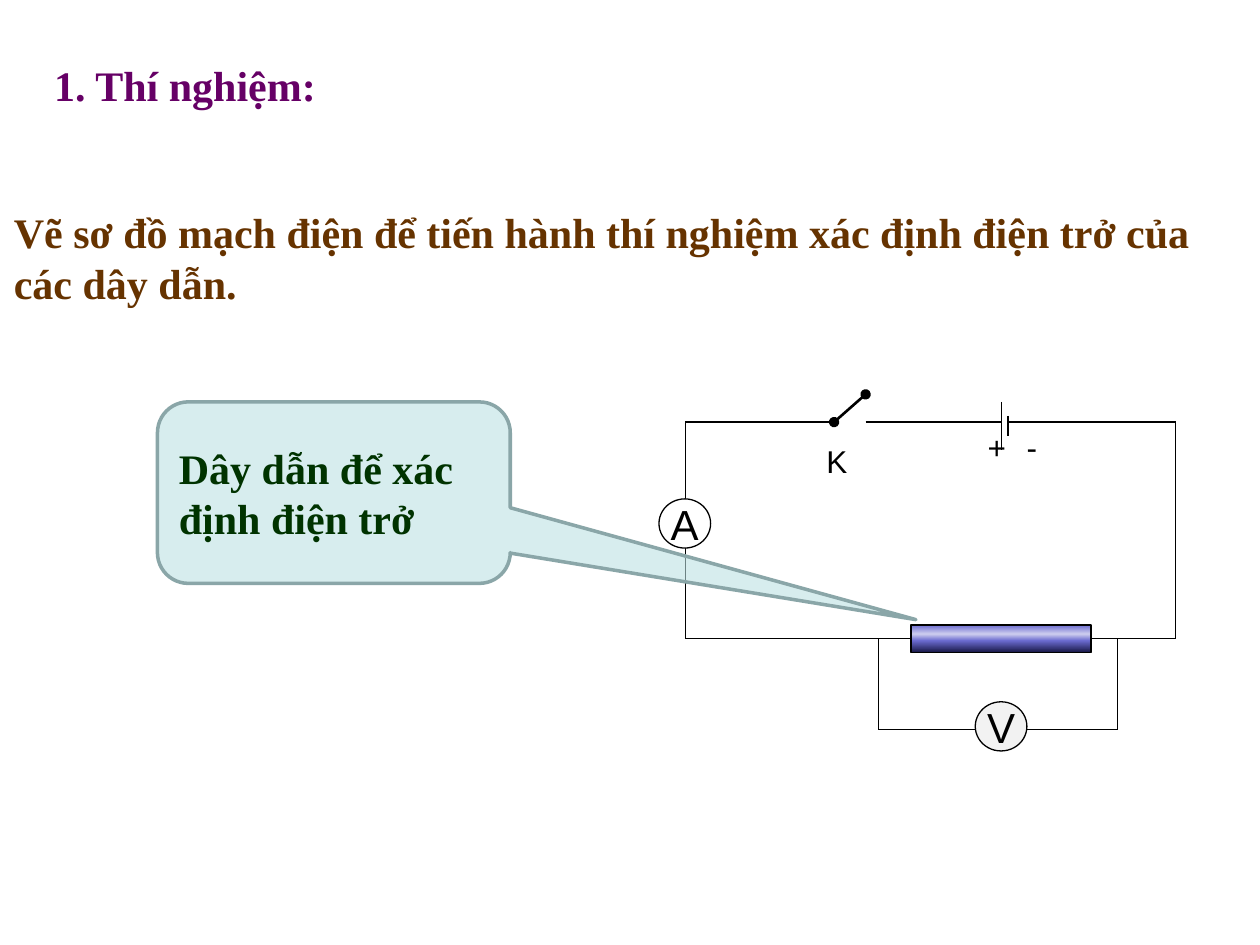
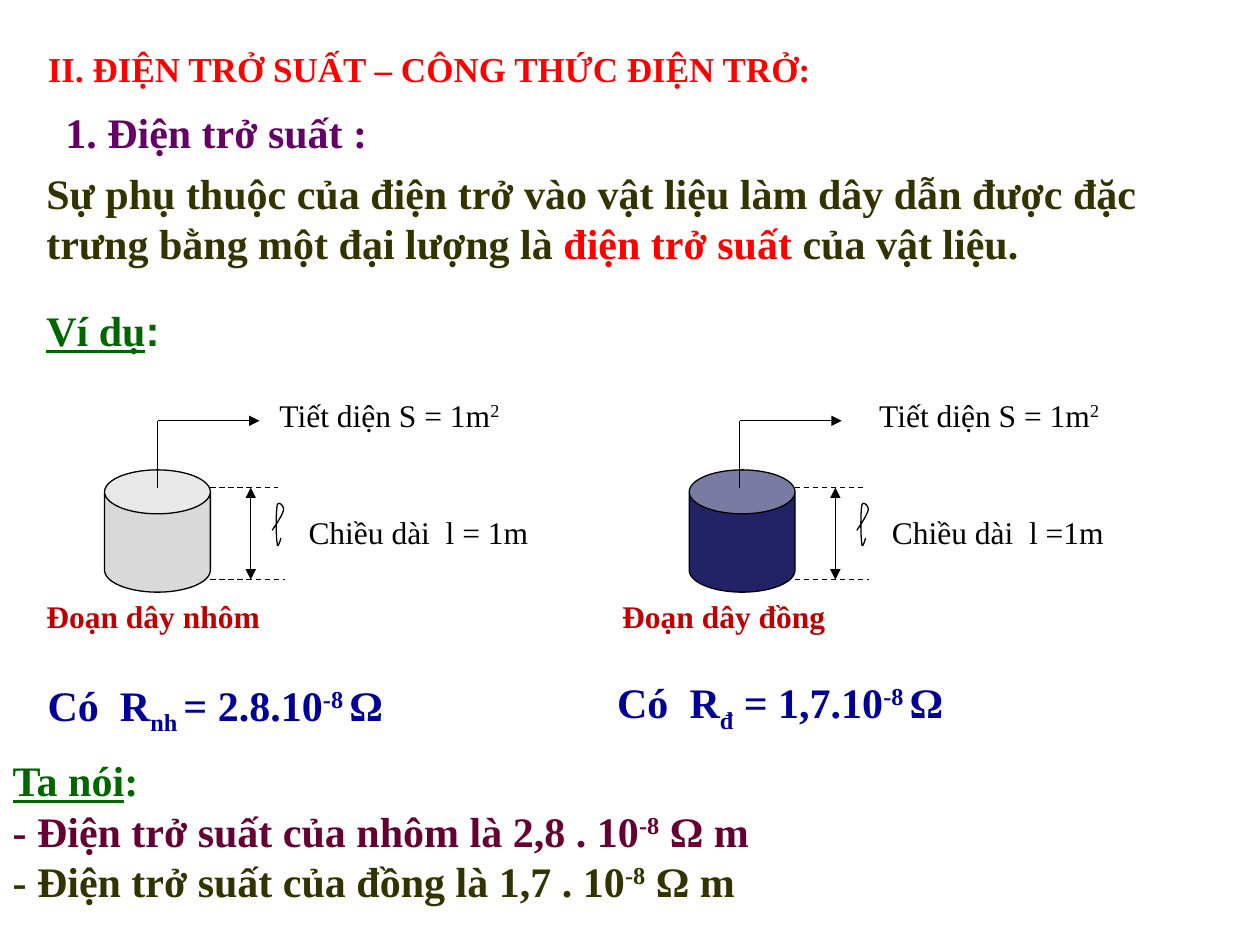
from lxml import etree
from pptx import Presentation
from pptx.dml.color import RGBColor
from pptx.enum.dml import MSO_LINE
from pptx.enum.shapes import MSO_CONNECTOR, MSO_SHAPE
from pptx.enum.text import MSO_ANCHOR, MSO_AUTO_SIZE, PP_ALIGN
from pptx.oxml.ns import qn
from pptx.util import Inches, Pt

STRAIGHT = MSO_CONNECTOR.STRAIGHT
ELLIPSE, RECTANGLE, CAN = MSO_SHAPE.OVAL, MSO_SHAPE.RECTANGLE, MSO_SHAPE.CAN
CALLOUT = MSO_SHAPE.ROUNDED_RECTANGULAR_CALLOUT
TOP, MIDDLE = MSO_ANCHOR.TOP, MSO_ANCHOR.MIDDLE
LEFT, CENTER = PP_ALIGN.LEFT, PP_ALIGN.CENTER
NO_AUTO_SIZE = MSO_AUTO_SIZE.NONE
DASH = MSO_LINE.DASH

SERIF, SANS = "Times New Roman", "Arial"
COLORS = {
    "black": "000000", "white": "FFFFFF", "red": "FF0000", "purple": "660066",
    "brown": "663300", "olive": "333300", "green": "006600", "dark_green": "003300",
    "navy": "000099", "plum": "660033", "caption": "C00000", "meter": "F2F2F2",
    "callout": "BBE0E3", "callout_edge": "8AA6A8",
    "aluminium": "D9D9D9", "copper": "222267",
}
CONDUCTOR_STOPS = [(0, "6B6BCF"), (33, "CECEEF"), (57, "6B6BCF"), (100, "171745")]
SUB, SUPER = {"baseline": -25}, {"baseline": 30}
LENGTH_SYMBOL = [
    [(0, 0.24), (0.04, 0.18), (0.08, 0.12), (0.09, 0.08)],
    [(0.09, 0.08), (0.1, 0.05), (0.05, 0), (0.04, 0.04)],
    [(0.04, 0.04), (0.03, 0.09), (0.03, 0.3), (0.04, 0.34)],
    [(0.04, 0.34), (0.04, 0.39), (0.06, 0.34), (0.07, 0.3)],
]


def rgb(name):
    return RGBColor.from_string(COLORS[name])


def write_text(paragraph, text, font=SERIF, size=24, color="black", bold=True,
               underline=False, baseline=0):
    run = paragraph.add_run()
    run.text = text
    run.font.name = font
    run.font.size = Pt(size)
    run.font.bold = bold
    run.font.underline = underline
    run.font.color.rgb = rgb(color)
    if baseline:
        run._r.get_or_add_rPr().set("baseline", str(baseline * 1000))


def curve_points(curves, steps=8):
    for start, first, second, end in curves:
        for step in range(steps + 1):
            t = step / steps
            weights = ((1 - t) ** 3, 3 * t * (1 - t) ** 2, 3 * t * t * (1 - t), t ** 3)
            points = (start, first, second, end)
            yield tuple(sum(weight * point[axis] for weight, point in zip(weights, points))
                        for axis in (0, 1))


class Deck:
    def __init__(self):
        self.presentation = Presentation()
        self.presentation.slide_width = Inches(10)
        self.presentation.slide_height = Inches(7.5)
        self.slide = None

    def add_slide(self):
        self.slide = self.presentation.slides.add_slide(self.presentation.slide_layouts[1])

    def fill_text(self, shape, paragraphs, wrap=True, anchor=TOP, align=LEFT, **style):
        frame = shape.text_frame
        frame.word_wrap = wrap
        frame.auto_size = NO_AUTO_SIZE
        frame.vertical_anchor = anchor
        if isinstance(paragraphs, str):
            paragraphs = [[paragraphs]]
        for index, runs in enumerate(paragraphs):
            paragraph = frame.add_paragraph() if index else frame.paragraphs[0]
            paragraph.alignment = align
            paragraph.space_before = Pt(0)
            for run in runs:
                text, change = (run, {}) if isinstance(run, str) else run
                write_text(paragraph, text, **{**style, **change})

    def place(self, shape, box):
        shape.left, shape.top, shape.width, shape.height = map(Inches, box)

    def title(self, box, text, **style):
        shape = self.slide.shapes.title
        self.place(shape, box)
        self.fill_text(shape, text, **style)

    def body(self, box, paragraphs, **style):
        shape = self.slide.placeholders[1]
        self.place(shape, box)
        self.fill_text(shape, paragraphs, **style)
        for paragraph in shape.text_frame.paragraphs:
            properties = paragraph._p.get_or_add_pPr()
            properties.set("marL", "0")
            properties.set("indent", "0")
            etree.SubElement(properties, qn("a:buNone"))

    def text(self, box, paragraphs, **style):
        shape = self.slide.shapes.add_textbox(*map(Inches, box))
        self.fill_text(shape, paragraphs, **style)

    def shape(self, kind, box, fill, edge="black", width=0.75):
        shape = self.slide.shapes.add_shape(kind, *map(Inches, box))
        shape.shadow.inherit = False
        shape.fill.solid()
        shape.fill.fore_color.rgb = rgb(fill)
        shape.line.color.rgb = rgb(edge)
        shape.line.width = Pt(width)
        return shape

    def meter(self, left, top, letter, fill):
        shape = self.shape(ELLIPSE, (left, top, 0.41, 0.39), fill)
        self.fill_text(shape, letter, wrap=False, anchor=MIDDLE, align=CENTER,
                       font=SANS, bold=False)

    def conductor(self, box):
        shape = self.shape(RECTANGLE, box, "white")
        shape.fill.gradient()
        shape.fill.gradient_angle = 270
        stops = shape._element.spPr.find(".//" + qn("a:gsLst"))
        for stop in list(stops):
            stops.remove(stop)
        for position, color in CONDUCTOR_STOPS:
            stop = etree.SubElement(stops, qn("a:gs"), pos=str(position * 1000))
            etree.SubElement(stop, qn("a:srgbClr"), val=color)

    def callout(self, box, text, adjustments, opacity, **style):
        shape = self.shape(CALLOUT, box, "callout", "callout_edge", 2)
        for index, value in enumerate(adjustments):
            shape.adjustments[index] = value
        color = shape._element.spPr.find(qn("a:solidFill")).find(qn("a:srgbClr"))
        etree.SubElement(color, qn("a:alpha"), val=str(opacity * 1000))
        self.fill_text(shape, text, anchor=MIDDLE, **style)

    def line(self, start, end, width=0.75, dash=None, head=None, tail=None):
        connector = self.slide.shapes.add_connector(STRAIGHT, *map(Inches, start + end))
        connector.line.color.rgb = rgb("black")
        connector.line.width = Pt(width)
        if dash:
            connector.line.dash_style = dash
        properties = connector._element.spPr
        outline = properties.find(qn("a:ln"))
        for tag, kind in (("a:headEnd", head), ("a:tailEnd", tail)):
            if kind:
                etree.SubElement(outline, qn(tag), type=kind)
        etree.SubElement(properties, qn("a:effectLst"))

    def wire(self, *points):
        for start, end in zip(points, points[1:]):
            self.line(start, end)

    def length_symbol(self, left, top):
        points = [(Inches(left + x), Inches(top + y)) for x, y in curve_points(LENGTH_SYMBOL)]
        builder = self.slide.shapes.build_freeform(*points[0])
        builder.add_line_segments(points[1:], close=False)
        shape = builder.convert_to_shape()
        shape.shadow.inherit = False
        shape.fill.background()
        shape.line.color.rgb = rgb("black")
        shape.line.width = Pt(0.75)

    def wire_sample(self, left, metal, axis, section_text, length_text, name, resistance):
        (section_left, section), (length_left, length) = section_text, length_text
        (name_left, name), (resistance_box, resistance) = name, resistance
        top, bottom, right = 3.87, 4.6, left + 0.84
        can = self.shape(CAN, (left, 3.73, 0.84, 0.97), metal)
        can.adjustments[0] = 0.415
        self.line((axis, top), (axis, 3.34))
        self.line((axis, 3.34), (axis + 0.81, 3.34), tail="triangle")
        self.line((left + 1.16, top), (left + 1.16, bottom), head="triangle", tail="triangle")
        for level, reach in ((top, 0.54), (bottom, 0.59)):
            self.line((right, level), (right + reach, level), dash=DASH)
        self.length_symbol(left + 1.33, 3.97)
        label = {"size": 18, "bold": False}
        self.text((section_left, 3.09, 2.53, 0.4), [[section, ("2", SUPER)]], **label)
        self.text((length_left, 4.02, 2.65, 0.4), length, **label)
        self.text((name_left, 4.69, 2.36, 0.4), name, size=18, color="caption")
        self.text(resistance_box, [resistance], color="navy")


def build_experiment(deck):
    deck.add_slide()
    deck.title((0.33, 0.42, 2.3, 0.5), "1. Thí nghiệm:", wrap=False, color="purple")
    deck.body((0.01, 1.59, 9.99, 0.91),
              "Vẽ sơ đồ mạch điện để tiến hành thí nghiệm xác định điện trở của các dây dẫn.",
              color="brown")
    left, right, top, bottom = 5.44, 9.33, 3.35, 5.07
    deck.wire((left, 3.96), (left, top), (6.62, top))
    deck.line((6.62, top), (6.87, 3.13), width=1.5, head="oval", tail="oval")
    deck.wire((6.87, top), (7.95, top))
    deck.wire((7.95, 3.19), (7.95, 3.57))
    deck.wire((8, 3.3), (8, 3.46))
    deck.wire((8, top), (right, top), (right, bottom), (8.66, bottom))
    deck.wire((left, 4.35), (left, bottom), (7.23, bottom))
    deck.wire((6.97, bottom), (6.97, 5.79), (7.79, 5.79))
    deck.wire((8.1, 5.79), (8.87, 5.79), (8.87, bottom))
    deck.conductor((7.23, 4.96, 1.43, 0.22))
    deck.meter(5.23, 3.96, "A", "white")
    deck.meter(7.74, 5.57, "V", "meter")
    for x, y, mark in ((6.46, 3.46, "K"), (7.74, 3.35, "+"), (8.05, 3.35, "-")):
        deck.text((x, y, 0.36, 0.27), mark, font=SANS, size=18, bold=False)
    deck.callout((1.25, 3.19, 2.8, 1.44), "Dây dẫn để xác định điện trở",
                 (1.65, 0.7, 0.17), 58, color="dark_green")


def build_resistivity(deck):
    deck.add_slide()
    deck.title((0.28, 0.33, 7.49, 0.44), "II. ĐIỆN TRỞ SUẤT – CÔNG THỨC ĐIỆN TRỞ:",
               size=20, color="red")
    deck.text((0.42, 0.8, 2.71, 0.5), "1. Điện trở suất :", wrap=False, color="purple")
    deck.text((0.27, 1.28, 9.22, 0.91), [[
        "Sự phụ thuộc của điện trở vào vật liệu làm dây dẫn được đặc trưng bằng "
        "một đại lượng là ",
        ("điện trở suất ", {"color": "red"}), "của vật liệu."]], color="olive")
    underlined = {"underline": True}
    deck.text((0.27, 2.37, 1.13, 0.5), [[("Ví dụ", underlined), (":", {"font": SANS})]],
              wrap=False, color="green")
    deck.wire_sample(
        0.83, "aluminium", 1.25, (2.12, "Tiết diện S = 1m"), (2.35, "Chiều dài  l = 1m"),
        (0.27, "Đoạn dây nhôm"),
        ((0.28, 5.34, 3.5, 0.5),
         ["Có  R", ("nh ", SUB), "= 2.8.10", ("-8 ", SUPER), "Ω"]))
    deck.wire_sample(
        5.47, "copper", 5.87, (6.88, "Tiết diện S = 1m"), (6.98, "Chiều dài  l =1m"),
        (4.84, "Đoạn dây đồng"),
        ((4.8, 5.32, 3.5, 0.5),
         ["Có  R", ("đ", SUB), " = 1,7.10", ("-8 ", SUPER), "Ω"]))
    conclusions = [[("Ta nói", underlined), ":"]]
    for metal, value, color in (("nhôm", "2,8", "plum"), ("đồng", "1,7", "olive")):
        tint = {"color": color}
        conclusions.append([(f"- Điện trở suất của {metal} là {value} . 10", tint),
                            ("-8", {**tint, **SUPER}), (" Ω m", tint)])
    deck.body((0, 5.94, 10, 1.31), conclusions, color="green")


def main():
    deck = Deck()
    build_experiment(deck)
    build_resistivity(deck)
    deck.presentation.save("out.pptx")


if __name__ == "__main__":
    main()
